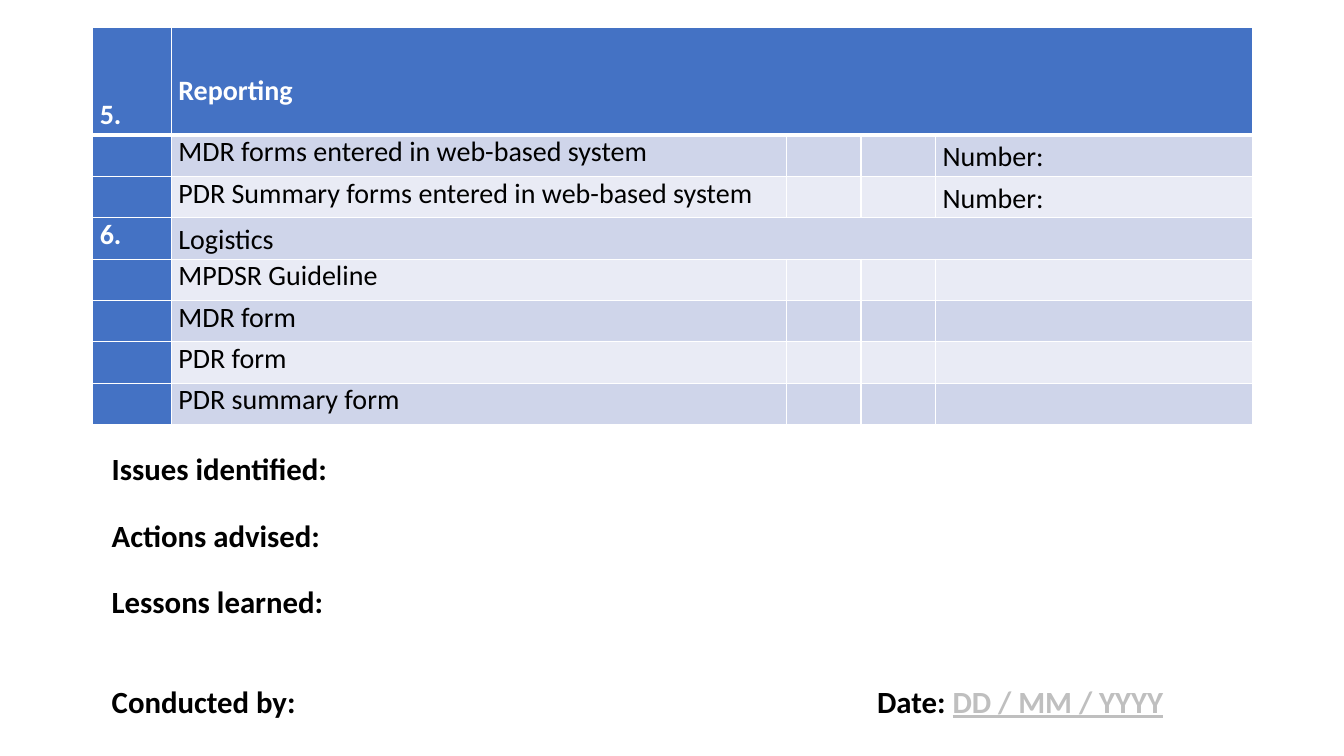
from dataclasses import dataclass
from itertools import product

from lxml.etree import SubElement
from pptx import Presentation
from pptx.dml.color import RGBColor
from pptx.enum.text import MSO_ANCHOR, PP_ALIGN
from pptx.oxml.ns import qn
from pptx.slide import Slide
from pptx.table import _Cell
from pptx.util import Emu, Inches, Pt

BLUE = RGBColor(0x44, 0x72, 0xC4)
BAND_DARK = RGBColor(0xCF, 0xD5, 0xEA)
BAND_LIGHT = RGBColor(0xE9, 0xEB, 0xF5)
WHITE = RGBColor(0xFF, 0xFF, 0xFF)
BLACK = RGBColor(0x00, 0x00, 0x00)
GREY = RGBColor(0xBF, 0xBF, 0xBF)

FONT = "Calibri"
SLIDE_WIDTH = Inches(13.33)
SLIDE_HEIGHT = Inches(7.5)
COLUMN_SHARES = [5.85, 45.76, 5.55, 5.55, 23.63]
HEADER_SHARE = 14.27
ROW_SHARE = 5.47
LOOSE_SPACING = 1.15


@dataclass(frozen=True)
class ChecklistRow:
    item: str
    number: str = ""
    remark: str = ""
    is_section: bool = False


@dataclass(frozen=True)
class ReportLine:
    label: str
    space_before: float = 23.75


CHECKLIST = [
    ChecklistRow("Reporting", number="5.", is_section=True),
    ChecklistRow("MDR forms entered in web-based system", remark="Number:"),
    ChecklistRow("PDR Summary forms entered in web-based system", remark="Number:"),
    ChecklistRow("Logistics", number="6.", is_section=True),
    ChecklistRow("MPDSR Guideline"),
    ChecklistRow("MDR form"),
    ChecklistRow("PDR form"),
    ChecklistRow("PDR summary form"),
]

REPORT_LINES = [
    ReportLine("Issues identified:", 0),
    ReportLine("Actions advised:"),
    ReportLine("Lessons learned:"),
    ReportLine("Conducted by:", 47.5),
]


def across(percent: float) -> Emu:
    return Emu(round(SLIDE_WIDTH * percent / 100))


def down(percent: float) -> Emu:
    return Emu(round(SLIDE_HEIGHT * percent / 100))


def add_borders(cell: _Cell, row: int) -> None:
    widths = {"lnL": 1, "lnR": 1, "lnT": 3 if row == 1 else 1, "lnB": 3 if row == 0 else 1}
    properties = cell._tc.get_or_add_tcPr()
    for side, width in widths.items():
        line = SubElement(properties, qn(f"a:{side}"), w=str(Pt(width)))
        fill = SubElement(line, qn("a:solidFill"))
        SubElement(fill, qn("a:srgbClr"), val=str(WHITE))


def fill_cell(cell: _Cell, row: int, column: int) -> None:
    add_borders(cell, row)
    cell.fill.solid()
    band = BAND_DARK if row % 2 else BAND_LIGHT
    cell.fill.fore_color.rgb = BLUE if row == 0 or column == 0 else band
    cell.margin_left = cell.margin_right = Inches(0.07)
    cell.margin_top = cell.margin_bottom = 0


def write_cell(cell: _Cell, text: str, highlighted: bool, spacing: float) -> None:
    para = cell.text_frame.paragraphs[0]
    para.text = text
    para.alignment = PP_ALIGN.JUSTIFY
    para.line_spacing = spacing
    para.font.name = FONT
    para.font.size = Pt(20)
    para.font.bold = highlighted
    para.font.color.rgb = WHITE if highlighted else BLACK


def add_checklist(page: Slide) -> None:
    heights = [HEADER_SHARE] + [ROW_SHARE] * (len(CHECKLIST) - 1)
    frame = page.shapes.add_table(
        len(heights), len(COLUMN_SHARES), across(6.9), down(3.6),
        across(sum(COLUMN_SHARES)), down(sum(heights)),
    )
    table = frame.table
    for column, share in zip(table.columns, COLUMN_SHARES):
        column.width = across(share)
    for row, share in zip(table.rows, heights):
        row.height = down(share)
    for row, column in product(range(len(heights)), range(len(COLUMN_SHARES))):
        fill_cell(table.cell(row, column), row, column)

    for row, entry in enumerate(CHECKLIST):
        if entry.is_section:
            table.cell(row, 1).merge(table.cell(row, len(COLUMN_SHARES) - 1))
        item_spacing = LOOSE_SPACING if entry.is_section else 1
        texts = {
            0: (entry.number, True, 1),
            1: (entry.item, row == 0, item_spacing),
            4: (entry.remark, False, LOOSE_SPACING),
        }
        for column, (text, highlighted, spacing) in texts.items():
            if text:
                write_cell(table.cell(row, column), text, highlighted, spacing)

    for column, margin in enumerate([0.03, 0.27]):
        header = table.cell(0, column)
        header.vertical_anchor = MSO_ANCHOR.BOTTOM
        header.margin_bottom = Inches(margin)


def add_report(page: Slide) -> None:
    box = page.shapes.add_textbox(across(7.58), down(59.07), across(84.77), down(37.2))
    frame = box.text_frame
    frame.word_wrap = True
    frame.vertical_anchor = MSO_ANCHOR.MIDDLE
    for position, line in enumerate(REPORT_LINES):
        para = frame.add_paragraph() if position else frame.paragraphs[0]
        para.text = line.label
        para.line_spacing = 0.9
        para.space_before = Pt(line.space_before)
        para.font.name = FONT
        para.font.size = Pt(22)
        para.font.bold = True
        para.font.color.rgb = BLACK

    signature = frame.paragraphs[-1]
    signature.add_run().text = "\tDate: "
    date = signature.add_run()
    date.text = "DD / MM / YYYY"
    date.font.underline = True
    date.font.color.rgb = GREY
    properties = signature._p.get_or_add_pPr()
    stops = properties.makeelement(qn("a:tabLst"))
    properties.find(qn("a:defRPr")).addprevious(stops)
    SubElement(stops, qn("a:tab"), pos=str(across(56.94)), algn="l")


def main() -> None:
    deck = Presentation()
    deck.slide_width = SLIDE_WIDTH
    deck.slide_height = SLIDE_HEIGHT
    page = deck.slides.add_slide(deck.slide_layouts[6])
    add_report(page)
    add_checklist(page)
    deck.save("out.pptx")


if __name__ == "__main__":
    main()
